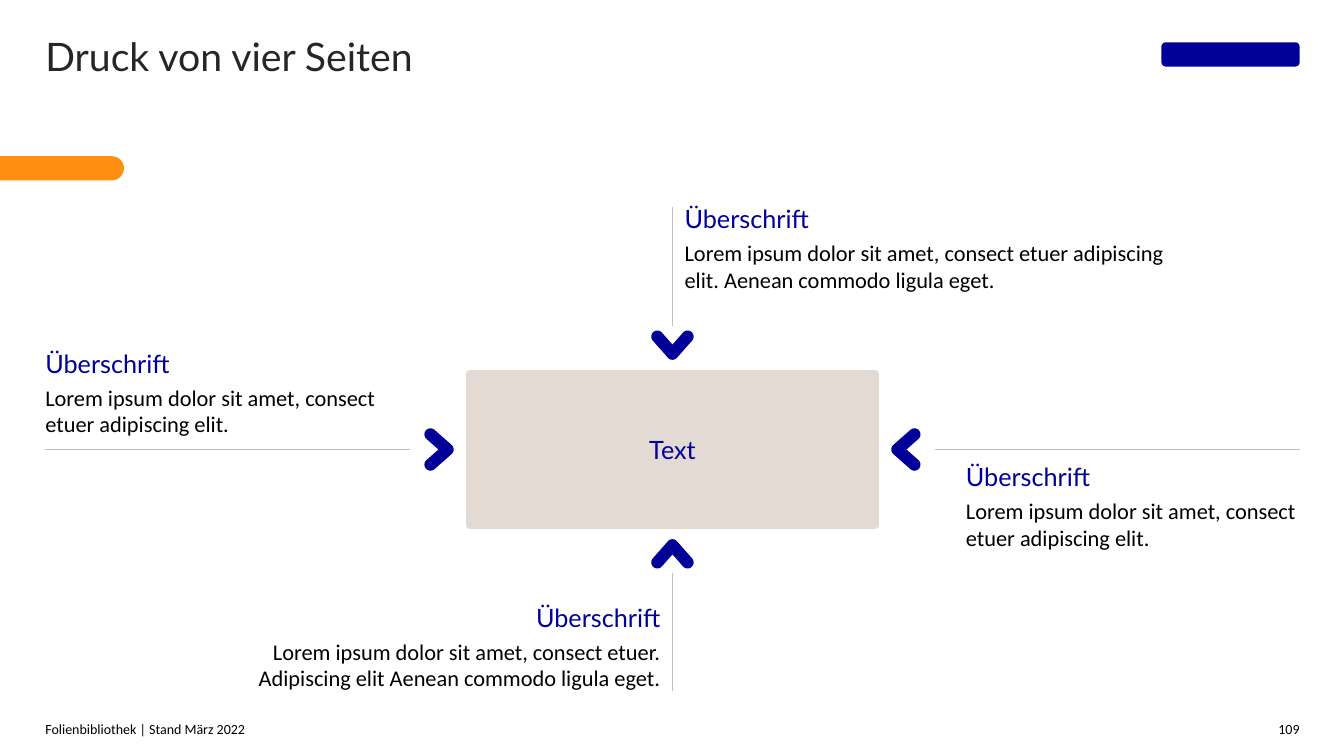
from math import atan2, cos, degrees, pi, radians, sin

from lxml import etree
from pptx import Presentation
from pptx.dml.color import RGBColor
from pptx.enum.shapes import MSO_CONNECTOR, MSO_SHAPE
from pptx.enum.text import MSO_ANCHOR, MSO_AUTO_SIZE, PP_ALIGN
from pptx.oxml.ns import qn
from pptx.util import Inches, Pt

NAVY = RGBColor(0x00, 0x00, 0x99)
ORANGE = RGBColor(0xFE, 0x8F, 0x11)
SAND = RGBColor(0xE4, 0xDA, 0xD4)
GREY = RGBColor(0xBF, 0xBF, 0xBF)
DARK = RGBColor(0x26, 0x26, 0x26)
BLACK = RGBColor(0x00, 0x00, 0x00)

LEFT, CENTER, RIGHT = PP_ALIGN.LEFT, PP_ALIGN.CENTER, PP_ALIGN.RIGHT
TOP, MIDDLE, BOTTOM = MSO_ANCHOR.TOP, MSO_ANCHOR.MIDDLE, MSO_ANCHOR.BOTTOM
RECT, ROUND = MSO_SHAPE.RECTANGLE, MSO_SHAPE.ROUNDED_RECTANGLE
STRAIGHT = MSO_CONNECTOR.STRAIGHT
FIXED = MSO_AUTO_SIZE.NONE

HEAD, BODY = "Lato", "Calibri"
MID_X, MID_Y = 6.67, 4.46
EDGE_L, EDGE_R = 0.45, 12.89


def write(para, text, font=BODY, size=16, color=BLACK, align=LEFT, after=0):
    """Fill one paragraph and format its runs."""
    para.text = text
    para.alignment = align
    para.space_before, para.space_after = Pt(0), Pt(after)
    for run in para.runs:
        run.font.name = font
        run.font.size = Pt(size)
        run.font.color.rgb = color


def arc(x, y, radius, start, end, steps=16):
    """Points on a circle, angles in degrees, clockwise from the right."""
    turns = [radians(start + (end - start) * i / steps) for i in range(steps + 1)]
    return [(x + radius * cos(t), y + radius * sin(t)) for t in turns]


class Page:
    def __init__(self, deck):
        self.slide = deck.slides.add_slide(deck.slide_layouts[5])
        self.shapes = self.slide.shapes

    def frame(self, shape, anchor=TOP, insets=(0, 0, 0, 0)):
        frame = shape.text_frame
        frame.word_wrap = True
        frame.auto_size = FIXED
        frame.vertical_anchor = anchor
        (frame.margin_left, frame.margin_top,
         frame.margin_right, frame.margin_bottom) = map(Inches, insets)
        return frame

    def title(self, text, area):
        shape = self.shapes.title
        shape.left, shape.top, shape.width, shape.height = map(Inches, area)
        write(self.frame(shape).paragraphs[0], text, font=HEAD, size=28, color=DARK)

    def box(self, area, anchor=TOP, insets=(0, 0, 0, 0)):
        return self.frame(self.shapes.add_textbox(*map(Inches, area)), anchor, insets)

    def label(self, text, area, align=LEFT):
        write(self.box(area, BOTTOM).paragraphs[0], text, size=10, align=align)

    def note(self, text, area, anchor, insets, align=LEFT):
        frame = self.box(area, anchor, insets)
        write(frame.paragraphs[0], "Überschrift", font=HEAD, size=18,
              color=NAVY, align=align, after=4)
        write(frame.add_paragraph(), text, align=align, after=4)

    def paint(self, shape, color):
        shape.shadow.inherit = False
        shape.fill.solid()
        shape.fill.fore_color.rgb = color
        shape.line.fill.background()
        return shape

    def block(self, kind, area, color):
        return self.paint(self.shapes.add_shape(kind, *map(Inches, area)), color)

    def shape(self, points, color):
        spots = [(Inches(x), Inches(y)) for x, y in points]
        build = self.shapes.build_freeform(*spots[0])
        build.add_line_segments(spots[1:], close=True)
        return self.paint(build.convert_to_shape(), color)

    def chevron(self, x, y, turn):
        """Round-ended arrowhead around (x, y), turned in degrees."""
        back, tip, half, radius = -0.08, 0.09, 0.15, 0.06
        slope = atan2(half, tip - back)
        side = 90 - degrees(slope)
        points = (arc(tip, 0, radius, -side, side)
                  + arc(back, half, radius, side, side + 180)
                  + [(tip - radius / sin(slope), 0)]
                  + arc(back, -half, radius, 180 - side, 360 - side))
        c, s = cos(turn * pi / 180), sin(turn * pi / 180)
        self.shape([(x + c * u - s * v, y + s * u + c * v) for u, v in points], NAVY)

    def rule(self, *ends):
        line = self.shapes.add_connector(STRAIGHT, *map(Inches, ends))
        line.line.color.rgb = GREY
        line.line.width = Pt(0.75)
        etree.SubElement(line._element.spPr, qn("a:effectLst"))


def main():
    deck = Presentation()
    deck.slide_width, deck.slide_height = Inches(13.33), Inches(7.5)
    page = Page(deck)

    # Accent bar and brand mark
    page.shape([(0, 1.55)] + arc(1.11, 1.67, 0.12, -90, 90) + [(0, 1.79)], ORANGE)
    page.block(ROUND, (11.52, 0.42, 1.37, 0.24), NAVY)

    # Title and footer
    page.title("Druck von vier Seiten", (EDGE_L, 0.32, 9.61, 0.55))
    page.label("Folienbibliothek | Stand März 2022", (EDGE_L, 7.16, 11.06, 0.16))
    page.label("109", (12.58, 7.16, 0.31, 0.16), RIGHT)

    # Central box
    core = page.block(RECT, (4.66, 3.71, 4.02, 1.5), SAND)
    core.line.color.rgb = SAND
    core.line.width = Pt(6)
    etree.SubElement(core.line._get_or_add_ln(), qn("a:round"))
    write(page.frame(core, MIDDLE).paragraphs[0], "Text", font=HEAD,
          size=18, color=NAVY, align=CENTER)

    # Notes on the four sides
    short = "Lorem ipsum dolor sit amet, consect etuer adipiscing elit."
    page.note("Lorem ipsum dolor sit amet, consect etuer adipiscing\n"
              "elit. Aenean commodo ligula eget.",
              (MID_X, 2.02, 6.22, 1.18), TOP, (0.12, 0, 0, 0))
    page.note(short, (EDGE_L, 2.06, 3.6, 2.4), BOTTOM, (0, 0, 0, 0.12))
    page.note(short, (9.58, MID_Y, 3.31, 2.4), TOP, (0, 0.12, 0, 0))
    page.note("Lorem ipsum dolor sit amet, consect etuer.\n"
              "Adipiscing elit Aenean commodo ligula eget.",
              (EDGE_L, 5.68, 6.22, 1.18), BOTTOM, (0, 0, 0.12, 0), RIGHT)

    # Guide lines
    for start, end in ((EDGE_L, 4.07), (9.27, EDGE_R)):
        page.rule(start, MID_Y, end, MID_Y)
    for start, end in ((2.05, 3.23), (5.68, 6.86)):
        page.rule(MID_X, start, MID_X, end)

    # Chevrons pointing at the box
    for turn in range(0, 360, 90):
        angle = radians(turn)
        page.chevron(MID_X - 2.32 * cos(angle), MID_Y - 1.04 * sin(angle), turn)

    deck.save("out.pptx")


if __name__ == "__main__":
    main()
